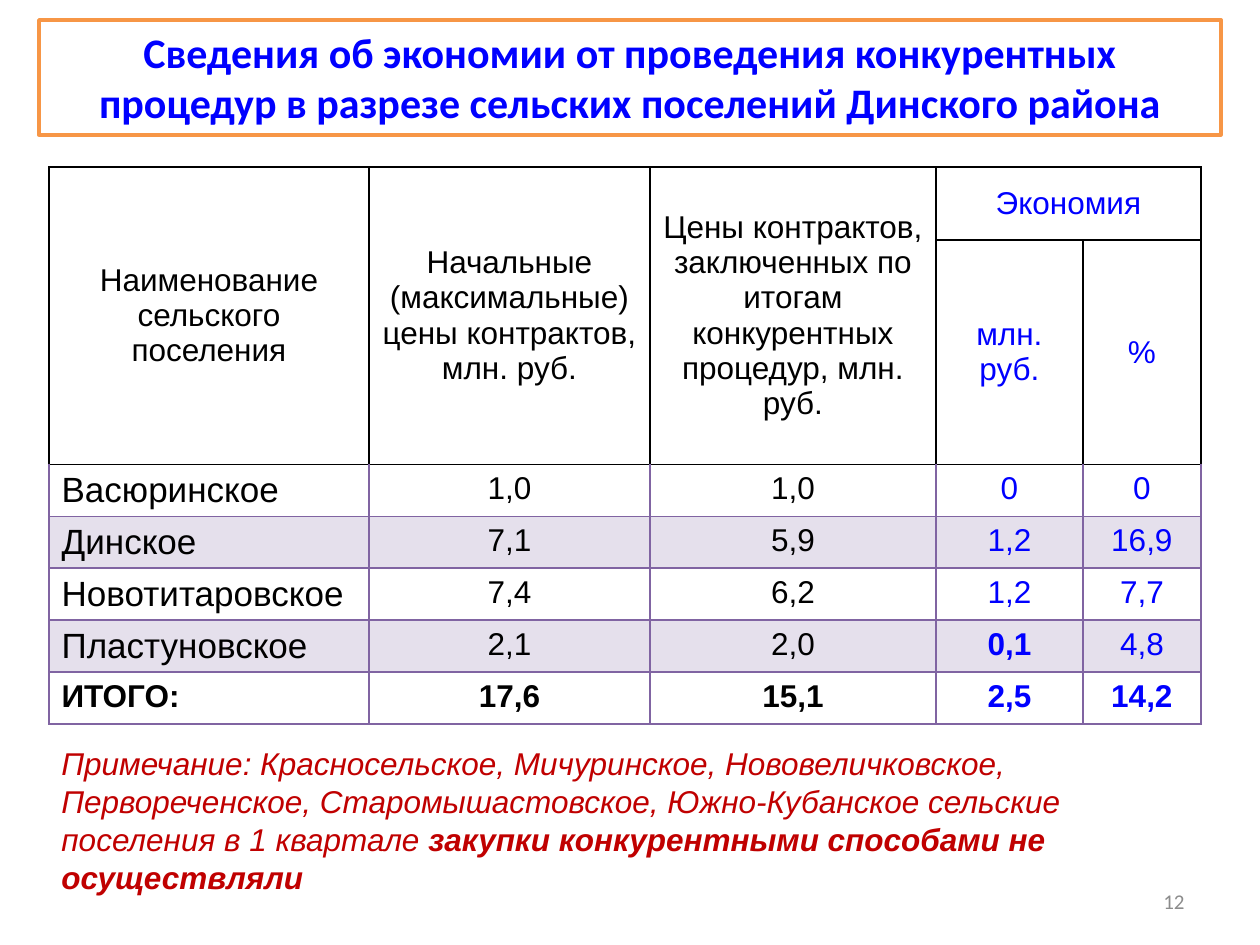
from lxml.etree import SubElement
from pptx import Presentation
from pptx.dml.color import RGBColor
from pptx.enum.shapes import MSO_SHAPE
from pptx.enum.text import MSO_ANCHOR, MSO_AUTO_SIZE, PP_ALIGN
from pptx.oxml import parse_xml
from pptx.oxml.ns import nsdecls, qn
from pptx.util import Pt

BLACK, BLUE, PURPLE, RED = "000000", "0000FF", "8064A2", "C00000"
COLUMNS = [320, 281, 286, 147, 118]
ROWS = [73] * 2 + [52] * 5
HEADINGS = [
    "Наименование сельского поселения",
    "Начальные (максимальные) цены контрактов, млн. руб.",
    "Цены контрактов, заключенных по итогам конкурентных процедур, млн. руб.",
]
SETTLEMENTS = [
    ["Васюринское", "1,0", "1,0", "0", "0"],
    ["Динское", "7,1", "5,9", "1,2", "16,9"],
    ["Новотитаровское", "7,4", "6,2", "1,2", "7,7"],
    ["Пластуновское", "2,1", "2,0", "0,1", "4,8"],
    ["ИТОГО:", "17,6", "15,1", "2,5", "14,2"],
]


def px(value):
    return round(value * 914400 / 126)


def rgb(value):
    return RGBColor.from_string(value)


def write(para, text, size=18, font="Arial", color=BLACK, bold=False, italic=False, align=PP_ALIGN.LEFT):
    para.alignment = align
    span = para.add_run()
    span.text = text
    span.font.size = Pt(size)
    span.font.name = font
    span.font.color.rgb = rgb(color)
    span.font.bold = bold
    span.font.italic = italic


class Page:
    """Draws styled elements on one blank slide."""

    def __init__(self, deck):
        self.shapes = deck.slides.add_slide(deck.slide_layouts[6]).shapes

    def text_box(self, left, top, width, height, grow=True, anchor=MSO_ANCHOR.TOP):
        frame = self.shapes.add_textbox(px(left), px(top), px(width), px(height)).text_frame
        frame.word_wrap = True
        frame.auto_size = MSO_AUTO_SIZE.SHAPE_TO_FIT_TEXT if grow else MSO_AUTO_SIZE.NONE
        frame.vertical_anchor = anchor
        return frame.paragraphs[0]

    def framed_title(self, text, left, top, width, height):
        box = self.shapes.add_shape(MSO_SHAPE.RECTANGLE, px(left), px(top), px(width), px(height))
        box.shadow.inherit = False
        box.fill.solid()
        box.fill.fore_color.rgb = rgb("FFFFFF")
        box.line.color.rgb = rgb("F79646")
        box.line.width = Pt(2)
        frame = box.text_frame
        frame.word_wrap = True
        frame.auto_size = MSO_AUTO_SIZE.SHAPE_TO_FIT_TEXT
        frame.vertical_anchor = MSO_ANCHOR.TOP
        write(frame.paragraphs[0], text, 24, "Calibri", BLUE, bold=True, align=PP_ALIGN.CENTER)

    def table(self, left, top, columns, rows):
        grid = self.shapes.add_table(
            len(rows), len(columns), px(left), px(top), px(sum(columns)), px(sum(rows))
        ).table
        grid.first_row = grid.horz_banding = False
        for column, width in zip(grid.columns, columns):
            column.width = px(width)
        for row, height in zip(grid.rows, rows):
            row.height = px(height)
        return grid

    def cell_style(self, cell, border, top_border, shaded):
        if shaded:
            cell.fill.solid()
            cell.fill.fore_color.rgb = rgb(PURPLE)
        else:
            cell.fill.background()
        properties = cell._tc.get_or_add_tcPr()
        for color in properties.iter(qn("a:srgbClr")):
            SubElement(color, qn("a:alpha"), val="20000")
        for index, side in enumerate("LRTB"):
            color = top_border if side == "T" else border
            properties.insert(index, parse_xml(
                f'<a:ln{side} {nsdecls("a")} w="12700"><a:solidFill>'
                f'<a:srgbClr val="{color}"/></a:solidFill></a:ln{side}>'
            ))


def fill_header(grid):
    for column, heading in enumerate(HEADINGS):
        grid.cell(0, column).merge(grid.cell(1, column))
        write(grid.cell(0, column).text_frame.paragraphs[0], heading, align=PP_ALIGN.CENTER)
    grid.cell(0, 3).merge(grid.cell(0, 4))
    for row, column, heading in [(0, 3, "Экономия"), (1, 3, "млн. руб."), (1, 4, "%")]:
        write(grid.cell(row, column).text_frame.paragraphs[0], heading, color=BLUE, align=PP_ALIGN.CENTER)
    for row in range(2):
        for column in range(len(COLUMNS)):
            grid.cell(row, column).vertical_anchor = MSO_ANCHOR.MIDDLE


def fill_settlements(grid):
    for row, values in enumerate(SETTLEMENTS, start=2):
        total = values[0] == "ИТОГО:"
        for column, value in enumerate(values):
            write(
                grid.cell(row, column).text_frame.paragraphs[0],
                value,
                size=20 if column == 0 and not total else 18,
                color=BLUE if column > 2 else BLACK,
                bold=total or value == "0,1",
                align=PP_ALIGN.CENTER if column else PP_ALIGN.LEFT,
            )


def main():
    deck = Presentation()
    deck.slide_width, deck.slide_height = px(1260), px(945)
    page = Page(deck)
    number = page.text_box(903, 876, 294, 50, grow=False, anchor=MSO_ANCHOR.MIDDLE)
    write(number, "12", 12, "Calibri", "8C8C8C", align=PP_ALIGN.RIGHT)

    grid = page.table(49, 167, COLUMNS, ROWS)
    for row in range(len(ROWS)):
        for column in range(len(COLUMNS)):
            page.cell_style(
                grid.cell(row, column),
                border=BLACK if row < 2 else PURPLE,
                top_border=BLACK if row < 3 else PURPLE,
                shaded=row in (3, 5),
            )
    fill_header(grid)
    fill_settlements(grid)

    page.framed_title(
        "Сведения об экономии от проведения конкурентных процедур "
        "в разрезе сельских поселений Динского района",
        39, 20, 1182, 115,
    )
    note = page.text_box(49, 738, 1142, 165)
    write(
        note,
        "Примечание: Красносельское, Мичуринское, Нововеличковское, Первореченское, "
        "Старомышастовское, Южно-Кубанское сельские поселения в 1 квартале ",
        color=RED, italic=True,
    )
    write(note, "закупки конкурентными способами не осуществляли", color=RED, bold=True, italic=True)
    deck.save("out.pptx")


if __name__ == "__main__":
    main()
